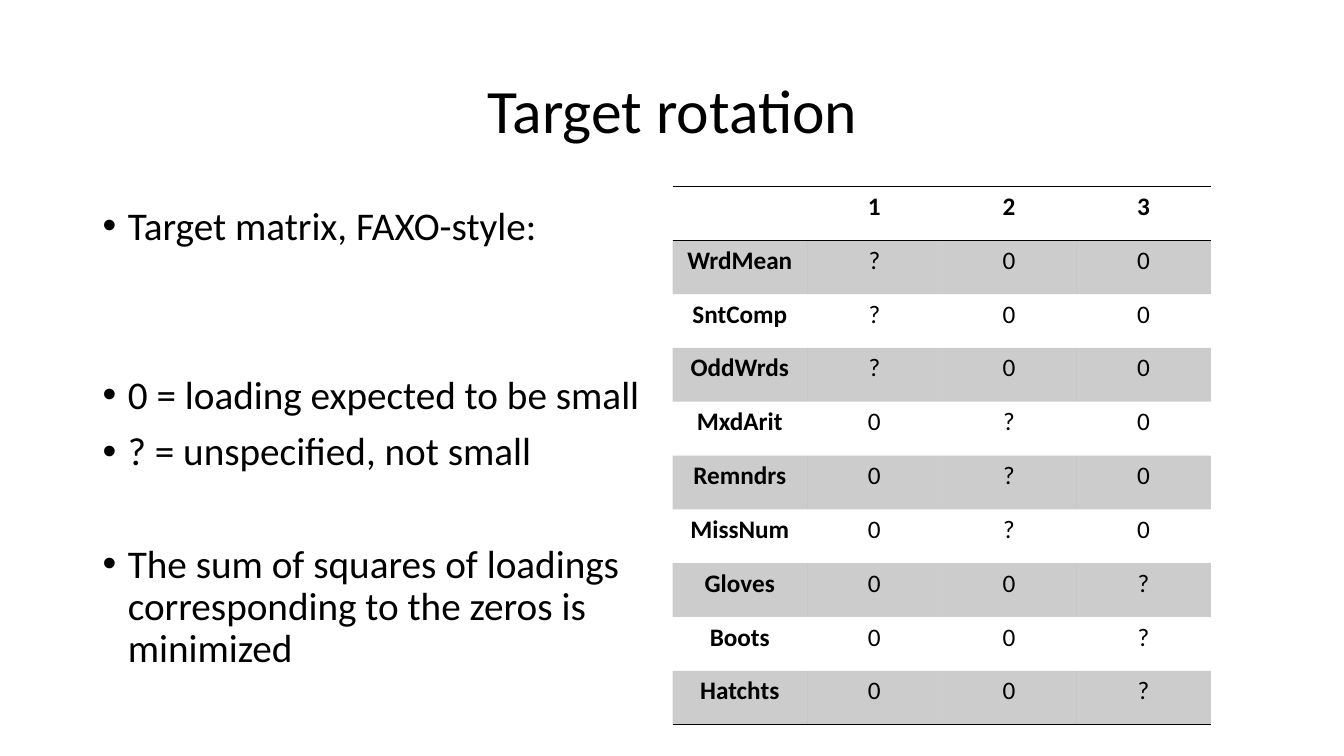
from lxml.etree import SubElement
from pptx import Presentation
from pptx.dml.color import RGBColor
from pptx.enum.text import MSO_ANCHOR, PP_ALIGN
from pptx.oxml.ns import qn
from pptx.util import Inches, Pt

COLORS = {"ink": "000000"}
FONT = "Calibri"
PLAIN_TABLE_STYLE = "{2D5ABB26-0587-4C30-8999-92F81FD0307C}"

# Content
TESTS = ["WrdMean", "SntComp", "OddWrds", "MxdArit", "Remndrs",
         "MissNum", "Gloves", "Boots", "Hatchts"]
TESTS_PER_FACTOR = 3
FACTORS = 3
# Each point: space before in points, then its lines
POINTS = [
    (10, ["Target matrix, FAXO-style:"]),
    (90.5, ["0 = loading expected to be small"]),
    (10, ["? = unspecified, not small"]),
    (50, ["The sum of squares of loadings", "corresponding to the zeros is", "minimized"]),
]


class SlideBuilder:
    def __init__(self, slide):
        self.slide = slide
        self.ink = RGBColor.from_string(COLORS["ink"])

    def add_run(self, paragraph, text, size, bold=False):
        run = paragraph.add_run()
        run.text = text
        run.font.name = FONT
        run.font.size = Pt(size)
        run.font.bold = bold
        run.font.color.rgb = self.ink

    def title(self, text, left, top, width, height):
        title = self.slide.shapes.title
        title.left, title.top = Inches(left), Inches(top)
        title.width, title.height = Inches(width), Inches(height)
        title.text_frame.vertical_anchor = MSO_ANCHOR.MIDDLE
        heading = title.text_frame.paragraphs[0]
        heading.alignment = PP_ALIGN.CENTER
        heading.line_spacing = 0.9
        self.add_run(heading, text, 44)

    def bullets(self, points, left, top, width, height):
        frame = self.slide.shapes.add_textbox(
            Inches(left), Inches(top), Inches(width), Inches(height)).text_frame
        frame.word_wrap = True
        for i, (space_before, lines) in enumerate(points):
            point = frame.add_paragraph() if i else frame.paragraphs[0]
            point.line_spacing = 0.9
            point.space_before = Pt(space_before)
            # Bullet with hanging indent
            props = point._p.get_or_add_pPr()
            props.set("marL", str(Inches(0.25)))
            props.set("indent", str(-Inches(0.25)))
            SubElement(props, qn("a:buFont"), typeface="Arial")
            SubElement(props, qn("a:buChar"), char="•")
            for n, line in enumerate(lines):
                if n:
                    point.add_line_break()
                self.add_run(point, line, 28)

    def rule(self, cell, side):
        line = SubElement(cell._tc.get_or_add_tcPr(), qn("a:" + side), w=str(Pt(1)))
        fill = SubElement(line, qn("a:solidFill"))
        SubElement(fill, qn("a:srgbClr"), val=COLORS["ink"])

    def shade(self, cell, opacity):
        cell.fill.solid()
        cell.fill.fore_color.rgb = self.ink
        color = cell._tc.tcPr.find(qn("a:solidFill")).find(qn("a:srgbClr"))
        SubElement(color, qn("a:alpha"), val=str(opacity * 1000))

    def table(self, rows, left, top, width, height):
        table = self.slide.shapes.add_table(
            len(rows), len(rows[0]), Inches(left), Inches(top),
            Inches(width), Inches(height)).table
        table._tbl.tblPr.find(qn("a:tableStyleId")).text = PLAIN_TABLE_STYLE
        last = len(rows) - 1
        for r, row in enumerate(rows):
            for c, value in enumerate(row):
                cell = table.cell(r, c)
                # Rules around the header and under the last row
                if r == 0:
                    self.rule(cell, "lnT")
                if r in (0, last):
                    self.rule(cell, "lnB")
                # Bands on odd rows
                if r % 2:
                    self.shade(cell, 20)
                else:
                    cell.fill.background()
                entry = cell.text_frame.paragraphs[0]
                entry.alignment = PP_ALIGN.CENTER
                if value:
                    self.add_run(entry, value, 18, bold=r == 0 or c == 0)


def target_matrix():
    header = [""] + [str(factor + 1) for factor in range(FACTORS)]
    body = [[test] + ["?" if i // TESTS_PER_FACTOR == factor else "0"
                      for factor in range(FACTORS)]
            for i, test in enumerate(TESTS)]
    return [header] + body


def main():
    deck = Presentation()
    deck.slide_width, deck.slide_height = Inches(13.33), Inches(7.5)
    builder = SlideBuilder(deck.slides.add_slide(deck.slide_layouts[5]))
    builder.title("Target rotation", 0.92, 0.4, 11.5, 1.45)
    builder.bullets(POINTS, 0.92, 2, 11.5, 4.76)
    builder.table(target_matrix(), 6.67, 1.85, 5.34, 5.34)
    deck.save("out.pptx")


if __name__ == "__main__":
    main()
